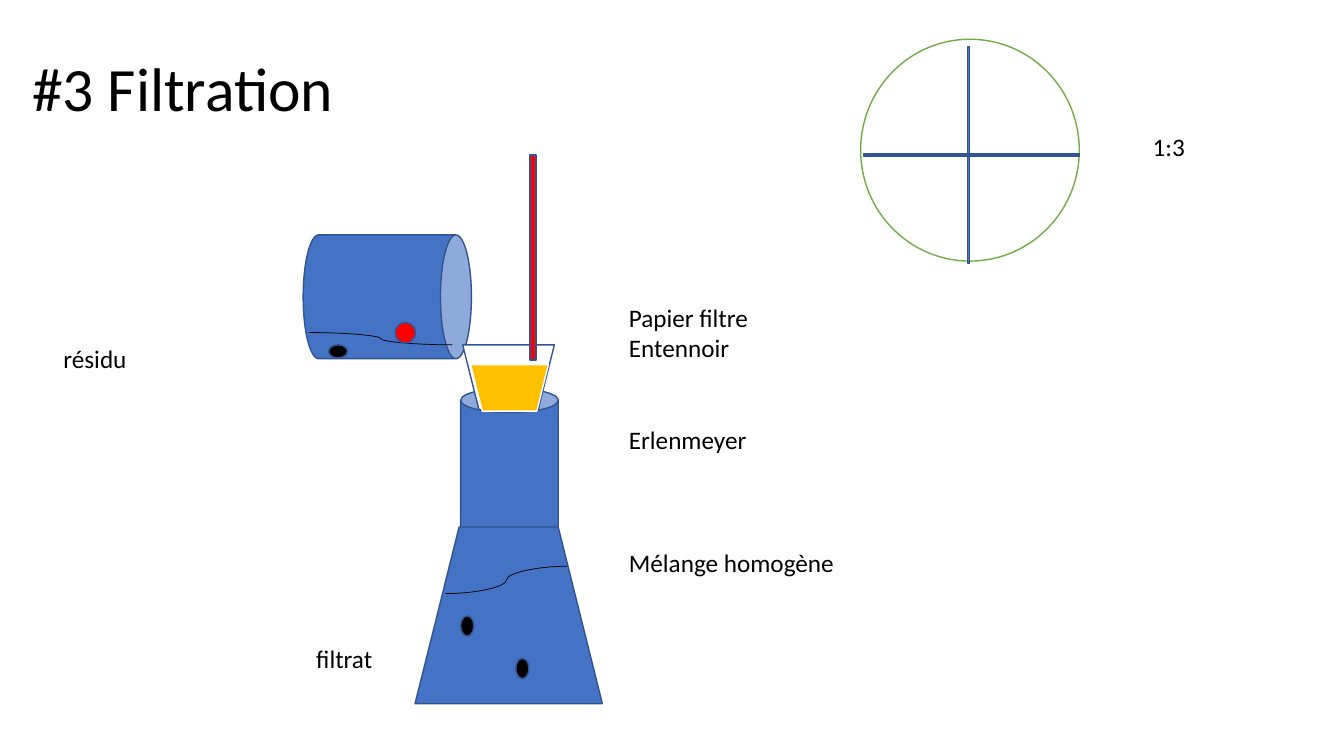
import pptx
import pptx.util
import pptx.oxml.ns
from pptx.dml.color import RGBColor
from pptx.enum.shapes import MSO_CONNECTOR, MSO_SHAPE
from pptx.enum.text import MSO_ANCHOR
from pptx.util import Cm, Pt

FONT = "Calibri"
BLACK = RGBColor(0x00, 0x00, 0x00)
WHITE = RGBColor(0xFF, 0xFF, 0xFF)
BLUE = RGBColor(0x44, 0x72, 0xC4)
NAVY = RGBColor(0x32, 0x54, 0x91)
RED = RGBColor(0xFF, 0x00, 0x00)
AMBER = RGBColor(0xFF, 0xC0, 0x00)
GREEN = RGBColor(0x70, 0xAD, 0x47)

CAN, TRAPEZOID = MSO_SHAPE.CAN, MSO_SHAPE.TRAPEZOID
OVAL, BAR = MSO_SHAPE.OVAL, MSO_SHAPE.RECTANGLE
SURFACE = "surface"

# Back to front, in cm.
# Shape: kind, (left, top, width, height), rotation, fill, line
# Liquid surface: SURFACE, (start x, start y, end x, end y)
APPARATUS = [
    (CAN, (8.2, 5.36, 3.12, 4.24), 90, BLUE, NAVY),             # beaker
    (CAN, (11.61, 9.78, 2.46, 3.89), 0, BLUE, NAVY),            # flask neck
    (TRAPEZOID, (10.46, 13.28, 4.72, 4.45), 0, BLUE, NAVY),     # flask body
    (SURFACE, (11.23, 14.96, 14.3, 14.27)),
    (OVAL, (13.0, 16.59, 0.33, 0.51), 0, BLACK, NAVY),
    (OVAL, (11.61, 15.52, 0.33, 0.51), 0, BLACK, NAVY),
    (TRAPEZOID, (11.66, 8.69, 2.31, 1.63), 180, WHITE, NAVY),   # funnel
    (TRAPEZOID, (11.86, 9.19, 1.96, 1.17), 180, AMBER, WHITE),  # filter paper
    (SURFACE, (7.8, 8.38, 11.4, 8.69)),
    (OVAL, (9.96, 8.13, 0.51, 0.51), 0, RED, NAVY),
    (OVAL, (8.28, 8.69, 0.48, 0.33), 0, BLACK, NAVY),
    (BAR, (13.36, 3.91, 0.15, 5.16), 0, RED, NAVY),             # stirring rod
    (OVAL, (21.69, 0.99, 5.51, 5.59), 0, WHITE, GREEN),         # filter disc
    (BAR, (24.38, 1.19, 0.05, 5.44), 0, BLUE, NAVY),            # folds
    (BAR, (24.46, 1.19, 0.05, 5.44), 90, BLUE, NAVY),
]

TITLE = ("#3 Filtration", (0.56, 0.46, 29.21, 3.68))
# Place, then (line, blank space before it in lines)
LABELS = [
    ((1.35, 8.53, 2.49, 1.02), [("résidu", 0)]),
    ((7.72, 16.08, 2.46, 1.02), [("filtrat", 0)]),
    ((15.6, 7.49, 8.94, 7.19), [("Papier filtre", 0), ("Entennoir", 0),
                                ("Erlenmeyer", 2), ("Mélange homogène", 3)]),
    ((28.8, 3.18, 3.0, 1.02), [("1:3", 0)]),
]
LINE_HEIGHT = 22  # points, for 18 pt text


def add_part(page, kind, place, rotation, fill, line):
    shape = page.shapes.add_shape(kind, *map(Cm, place))
    shape.rotation = rotation
    shape.shadow.inherit = False
    shape.fill.solid()
    shape.fill.fore_color.rgb = fill
    shape.line.color.rgb = line
    shape.line.width = Pt(1)


def add_surface(page, ends):
    curve = page.shapes.add_connector(MSO_CONNECTOR.CURVE, *map(Cm, ends))
    curve.line.color.rgb = BLACK
    curve.line.width = Pt(0.5)
    properties = curve._element.spPr
    properties.append(properties.makeelement(pptx.oxml.ns.qn("a:effectLst"), {}))


def add_text(page, place, lines, size):
    """Add a text box and return its frame."""
    frame = page.shapes.add_textbox(*map(Cm, place)).text_frame
    frame.word_wrap = True
    frame.text = "\n".join(words for words, _ in lines)
    for para, (_, gap) in zip(frame.paragraphs, lines):
        if gap:
            para.space_before = Pt(gap * LINE_HEIGHT)
        for span in para.runs:
            span.font.name = FONT
            span.font.size = Pt(size)
            span.font.color.rgb = BLACK
    return frame


def main():
    deck = pptx.Presentation()
    deck.slide_width, deck.slide_height = Cm(33.87), Cm(19.05)
    page = deck.slides.add_slide(deck.slide_layouts[6])

    words, place = TITLE
    heading = add_text(page, place, [(words, 0)], 44)
    heading.vertical_anchor = MSO_ANCHOR.MIDDLE
    heading.paragraphs[0].line_spacing = 0.9

    for kind, *details in APPARATUS:
        if kind == SURFACE:
            add_surface(page, *details)
        else:
            add_part(page, kind, *details)
    for place, lines in LABELS:
        add_text(page, place, lines, 18)

    deck.save("out.pptx")


if __name__ == "__main__":
    main()
